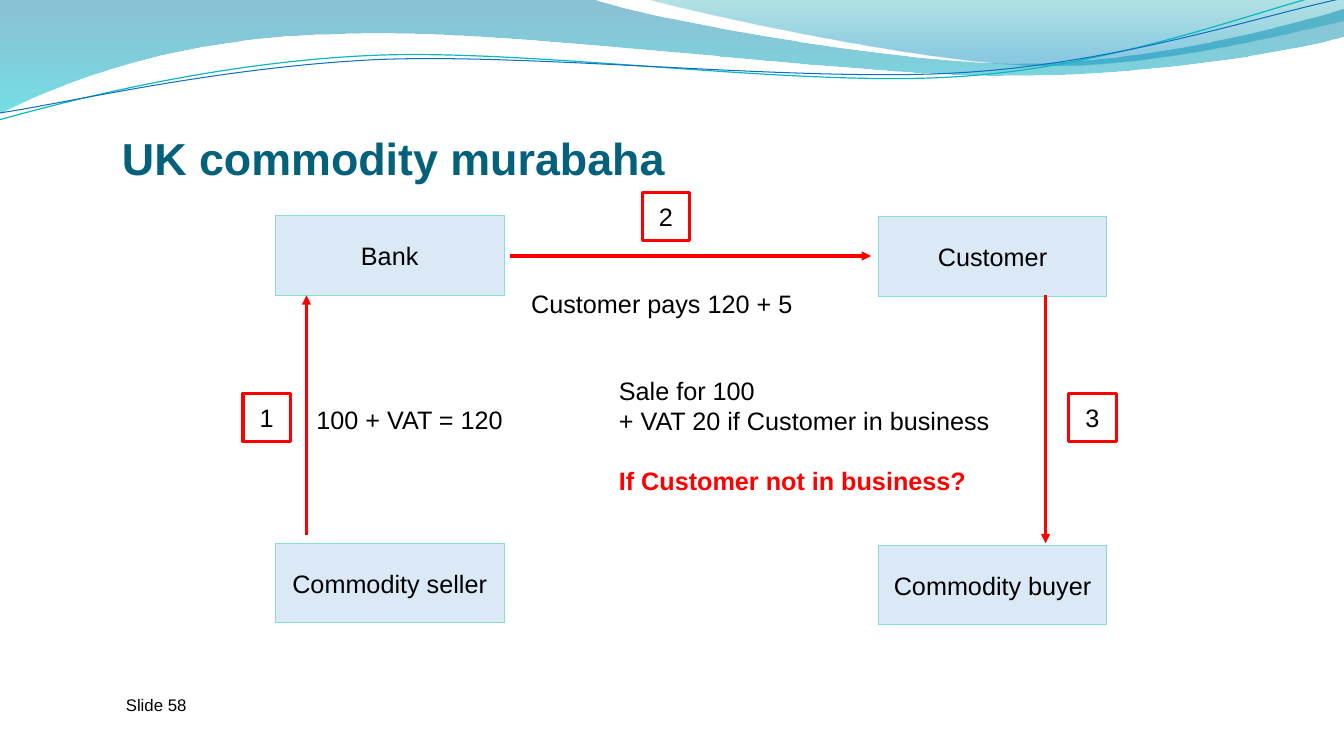
import math
from typing import NamedTuple, Optional

import pptx
import pptx.dml.color
import pptx.enum.shapes
import pptx.enum.text
import pptx.oxml
import pptx.oxml.ns
import pptx.util
from pptx.util import Inches

RGB = pptx.dml.color.RGBColor
SHAPE = pptx.enum.shapes.MSO_SHAPE
ANCHOR = pptx.enum.text.MSO_ANCHOR
ALIGN = pptx.enum.text.PP_ALIGN
NS = pptx.oxml.ns.nsdecls("a")

BLACK = RGB(0, 0, 0)
RED = RGB(0xFF, 0, 0)
TITLE = RGB(0x04, 0x61, 0x7B)
BLUE = RGB(0x0F, 0x6F, 0xC6)
MINT = RGB(0x85, 0xDF, 0xD0)
TEAL = RGB(0x0A, 0xB8, 0xBF)
DEEP = RGB(0x00, 0x74, 0xA1)
AQUA = RGB(0x00, 0xC6, 0xCF)
SEA = RGB(0x00, 0xA1, 0xA9)
SKY = RGB(0x00, 0x8B, 0xBF)
TILT = 357.3


class Stop(NamedTuple):
    place: float
    color: RGB
    alpha: int


class Wave(NamedTuple):
    start: tuple
    steps: list  # pairs are straight lines, sextets are Bezier curves
    stops: Optional[list] = None
    line: Optional[RGB] = None
    width: float = 0
    pivot: Optional[tuple] = None


class Box(NamedTuple):
    text: str
    left: float
    top: float


class Arrow(NamedTuple):
    x1: float
    y1: float
    x2: float
    y2: float


class Label(NamedTuple):
    left: float
    top: float
    width: float
    height: float
    lines: list
    size: int = 18
    color: RGB = BLACK
    bold: bool = False
    grow: bool = True


WAVES = [
    Wave((0, 0), [(5.87, -0.01), (6.34, 0.17, 8.85, 0.63, 10.11, 0.63),
                  (11.38, 0.63, 12.78, 0.26, 13.33, 0.09), (13.35, 0.36),
                  (13.11, 0.44, 11.6, 0.76, 9.94, 0.75),
                  (8.29, 0.75, 5.09, 0.28, 3.43, 0.34),
                  (1.72, 0.36, 0.61, 0.83, -0.01, 1.13), (0, 0)],
         [Stop(0, DEEP, 45), Stop(1, AQUA, 55)]),
    Wave((6.39, -0.01), [(6.79, 0.11, 9.09, 0.62, 10.25, 0.65),
                         (11.41, 0.69, 12.82, 0.32, 13.33, 0.21),
                         (13.33, 0), (6.39, -0.01)],
         [Stop(0, SEA, 30), Stop(0.8, SKY, 45)]),
    Wave((-0.01, 1.19), [(0.64, 1.01, 2.11, 0.62, 3.69, 0.55),
                         (5.27, 0.48, 7.9, 0.87, 9.5, 0.76),
                         (11.1, 0.66, 12.52, 0.08, 13.31, -0.1)],
         line=TEAL, width=0.85, pivot=(6.65, 0.57)),
    Wave((0, 1.12), [(0.63, 1.03, 2.18, 0.66, 3.78, 0.59),
                     (5.37, 0.53, 7.96, 0.82, 9.55, 0.72),
                     (11.15, 0.62, 12.55, 0.14, 13.34, -0.02)],
         line=BLUE, width=0.75, pivot=(6.67, 0.59)),
]
ROLES = [Box("Bank", 2.73, 2.14), Box("Commodity seller", 2.73, 5.39),
         Box("Commodity buyer", 8.71, 5.41), Box("Customer", 8.71, 2.15)]
STEPS = [Box("1", 2.41, 3.9), Box("3", 10.6, 3.9), Box("2", 6.37, 1.91)]
ARROWS = [Arrow(10.37, 2.93, 10.37, 5.39), Arrow(3.04, 5.31, 3.04, 2.93),
          Arrow(5.06, 2.54, 8.64, 2.54)]
HEAD = Label(1.21, 1, 7.43, 0.83, ["UK commodity murabaha"], 32, TITLE, True, False)
PAGE = Label(1.15, 6.84, 2.33, 0.4, ["Slide 58"], 12, grow=False)
COST = Label(3.04, 3.96, 2.31, 0.4, ["100 + VAT = 120"])
PAY = Label(5.17, 2.81, 3.15, 0.4, ["Customer pays 120 + 5"])
SALE = Label(6.04, 3.67, 4.17, 1.31,
             ["Sale for 100", "+ VAT 20 if Customer in business",
              "If Customer not in business?"])


def style(par, size: int = 18, color: RGB = BLACK, bold: bool = False) -> None:
    for run in par.runs:
        run.font.name = "Arial"
        run.font.size = pptx.util.Pt(size)
        run.font.color.rgb = color
        run.font.bold = bold


def fade(node, alpha: int) -> None:
    tint = node.find(".//" + pptx.oxml.ns.qn("a:srgbClr"))
    tint.append(pptx.oxml.parse_xml(f'<a:alpha {NS} val="{alpha * 1000}"/>'))


def level(dot: tuple, pivot: tuple) -> tuple:
    turn = math.radians(360 - TILT)
    x, y = dot[0] - pivot[0], dot[1] - pivot[1]
    return (pivot[0] + x * math.cos(turn) - y * math.sin(turn),
            pivot[1] + x * math.sin(turn) + y * math.cos(turn))


def bend(shape, steps: list) -> None:
    """Join each run of three segments that forms a curve."""
    lines = iter(list(shape.element.spPr.iter(pptx.oxml.ns.qn("a:lnTo"))))
    for step in steps:
        parts = [next(lines) for _ in range(len(step) // 2)]
        if len(parts) == 3:
            curve = pptx.oxml.parse_xml(f"<a:cubicBezTo {NS}/>")
            parts[0].addprevious(curve)
            for part in parts:
                curve.append(part[0])
                part.getparent().remove(part)


def draw_wave(slide, wave: Wave) -> None:
    dots = [wave.start] + [step[i:i + 2] for step in wave.steps
                           for i in range(0, len(step), 2)]
    if wave.pivot:
        dots = [level(dot, wave.pivot) for dot in dots]
    dots = [(Inches(x), Inches(y)) for x, y in dots]
    pen = slide.shapes.build_freeform(*dots[0])
    pen.add_line_segments(dots[1:], close=wave.stops is not None)
    shape = pen.convert_to_shape()
    bend(shape, wave.steps)
    shape.shadow.inherit = False
    if wave.stops:
        shape.line.fill.background()
        shape.fill.gradient()
        shape.fill.gradient_angle = 270
        nodes = shape.element.spPr.iter(pptx.oxml.ns.qn("a:gs"))
        for slot, node, stop in zip(shape.fill.gradient_stops, nodes, wave.stops):
            slot.position = stop.place
            slot.color.rgb = stop.color
            fade(node, stop.alpha)
    else:
        shape.rotation = TILT
        shape.fill.background()
        shape.line.color.rgb = wave.line
        shape.line.width = pptx.util.Pt(wave.width)


def draw_box(slide, box: Box, width: float, height: float, line: RGB,
             weight: float, fill: Optional[RGB] = None) -> None:
    area = (box.left, box.top, width, height)
    shape = slide.shapes.add_shape(SHAPE.RECTANGLE, *(Inches(v) for v in area))
    shape.shadow.inherit = False
    if fill is None:
        shape.fill.background()
    else:
        shape.fill.solid()
        shape.fill.fore_color.rgb = fill
        fade(shape.element.spPr, 15)
    shape.line.color.rgb = line
    shape.line.width = pptx.util.Pt(weight)
    frame = shape.text_frame
    frame.text = box.text
    frame.word_wrap = False
    frame.vertical_anchor = ANCHOR.MIDDLE
    frame.margin_left = frame.margin_right = Inches(0.07)
    frame.margin_top = frame.margin_bottom = 0
    frame.paragraphs[0].alignment = ALIGN.CENTER
    style(frame.paragraphs[0])


def draw_arrow(slide, arrow: Arrow) -> None:
    link = slide.shapes.add_connector(pptx.enum.shapes.MSO_CONNECTOR.STRAIGHT,
                                      *(Inches(v) for v in arrow))
    link.line.color.rgb = RED
    link.line.width = pptx.util.Pt(2.25)
    link.element.spPr.find(pptx.oxml.ns.qn("a:ln")).append(
        pptx.oxml.parse_xml(f'<a:tailEnd {NS} type="triangle"/>'))
    link.element.spPr.append(pptx.oxml.parse_xml(f"<a:effectLst {NS}/>"))


def draw_label(slide, label: Label):
    frame = slide.shapes.add_textbox(*(Inches(v) for v in label[:4])).text_frame
    frame.text = "\n".join(label.lines)
    frame.word_wrap = True
    if label.grow:
        frame.auto_size = pptx.enum.text.MSO_AUTO_SIZE.SHAPE_TO_FIT_TEXT
    for par in frame.paragraphs:
        style(par, label.size, label.color, label.bold)
    return frame


def main() -> None:
    deck = pptx.Presentation()
    deck.slide_width, deck.slide_height = Inches(13.33), Inches(7.5)
    slide = deck.slides.add_slide(deck.slide_layouts[6])

    # Waves along the top
    for wave in WAVES:
        draw_wave(slide, wave)
    # Title
    head = draw_label(slide, HEAD)
    head.vertical_anchor = ANCHOR.BOTTOM
    head.margin_left = head.margin_right = head.margin_bottom = 0
    # Parties, flows and step numbers
    for role in ROLES:
        draw_box(slide, role, 2.27, 0.79, MINT, 0.75, BLUE)
    for arrow in ARROWS:
        draw_arrow(slide, arrow)
    draw_label(slide, PAGE)
    for step in STEPS:
        draw_box(slide, step, 0.47, 0.48, RED, 2.25)
    # Terms of each flow, ending in the red question
    for label in (COST, PAY):
        draw_label(slide, label)
    query = draw_label(slide, SALE).paragraphs[-1]
    query.space_before = pptx.util.Pt(21.5)
    style(query, color=RED, bold=True)

    deck.save("out.pptx")


if __name__ == "__main__":
    main()
